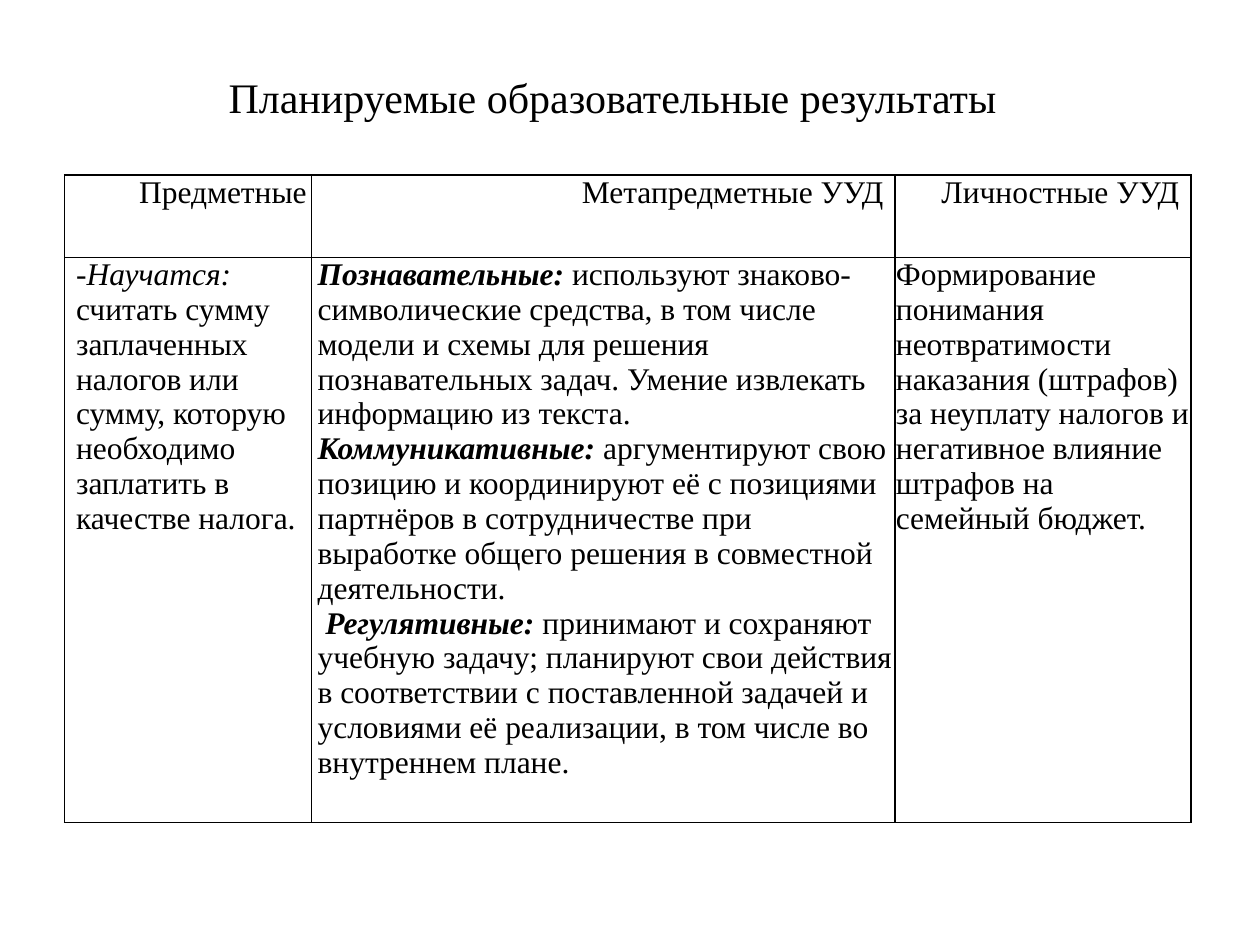
from dataclasses import dataclass

from lxml import etree
from pptx import Presentation
from pptx.dml.color import RGBColor
from pptx.enum.text import MSO_ANCHOR, PP_ALIGN
from pptx.oxml.ns import qn
from pptx.util import Pt

CENTER = PP_ALIGN.CENTER
TOP = MSO_ANCHOR.TOP


@dataclass(frozen=True)
class Theme:
    font: str = "Times New Roman"
    ink: str = "000000"
    paper: str = "FFFFFF"
    title_size: float = 24
    body_size: float = 18
    border: float = 1


THEME = Theme()
PLAIN, ITALIC, BOLD_ITALIC = (False, False), (False, True), (True, True)

TITLE = "Планируемые образовательные результаты"
COL_WIDTHS = (141, 333.5, 169)
ROW_HEIGHTS = (47, 323)

# Each heading: text, left indent
HEADINGS = (("Предметные", 42), ("Метапредметные УУД", 154), ("Личностные УУД", 26))

# Each column: left indent, then paragraphs of (first-line indent, runs)
RESULTS = (
    (6, [(0, [("-Научатся:", ITALIC),
              (" считать сумму заплаченных налогов или сумму, которую необходимо "
               "заплатить в качестве налога.", PLAIN)])]),
    (3, [(0, [("Познавательные:", BOLD_ITALIC),
              (" используют знаково-символические средства, в том числе модели и схемы "
               "для решения познавательных задач. Умение извлекать информацию из текста.",
               PLAIN)]),
         (0, [("Коммуникативные:", BOLD_ITALIC),
              (" аргументируют свою позицию и координируют её с позициями партнёров в "
               "сотрудничестве при выработке общего решения в совместной деятельности.",
               PLAIN)]),
         (4.5, [("Регулятивные:", BOLD_ITALIC),
                (" принимают и сохраняют учебную задачу; планируют свои действия в "
                 "соответствии с поставленной задачей и условиями её реализации, в том "
                 "числе во внутреннем плане.", PLAIN)])]),
    (0, [(0, [("Формирование понимания неотвратимости наказания (штрафов) за неуплату "
               "налогов и негативное влияние штрафов на семейный бюджет.", PLAIN)])]),
)


def add_run(p, text, size, style=PLAIN):
    r = p.add_run()
    r.text = text
    r.font.name = THEME.font
    r.font.size = Pt(size)
    r.font.color.rgb = RGBColor.from_string(THEME.ink)
    r.font.bold, r.font.italic = style


def add_borders(cell):
    """Draw all four sides; the lines must precede the fill in the cell XML."""
    tc_pr = cell._tc.get_or_add_tcPr()
    for i, side in enumerate(("a:lnL", "a:lnR", "a:lnT", "a:lnB")):
        ln = etree.Element(qn(side), w=str(Pt(THEME.border)))
        fill = etree.SubElement(ln, qn("a:solidFill"))
        etree.SubElement(fill, qn("a:srgbClr"), val=THEME.ink)
        tc_pr.insert(i, ln)


def fill_cell(cell, indent, paragraphs):
    cell.margin_left = cell.margin_right = Pt(0.5)
    cell.margin_top = cell.margin_bottom = Pt(0)
    cell.vertical_anchor = TOP
    cell.fill.solid()
    cell.fill.fore_color.rgb = RGBColor.from_string(THEME.paper)
    add_borders(cell)
    tf = cell.text_frame
    for i, (first_line, runs) in enumerate(paragraphs):
        p = tf.add_paragraph() if i else tf.paragraphs[0]
        p_pr = p._p.get_or_add_pPr()
        p_pr.set("marL", str(Pt(indent)))
        p_pr.set("indent", str(Pt(first_line)))
        for text, style in runs:
            add_run(p, text, THEME.body_size, style)


def add_title(slide, left, top, width, height):
    box = slide.shapes.add_textbox(Pt(left), Pt(top), Pt(width), Pt(height))
    tf = box.text_frame
    tf.word_wrap = True
    tf.margin_left = tf.margin_right = tf.margin_top = tf.margin_bottom = Pt(0)
    p = tf.paragraphs[0]
    p.alignment = CENTER
    add_run(p, TITLE, THEME.title_size)


def add_results_table(slide, left, top, width, height):
    frame = slide.shapes.add_table(len(ROW_HEIGHTS), len(COL_WIDTHS),
                                   Pt(left), Pt(top), Pt(width), Pt(height))
    table = frame.table
    for col, share in zip(table.columns, COL_WIDTHS):
        col.width = Pt(width * share / sum(COL_WIDTHS))
    for row, share in zip(table.rows, ROW_HEIGHTS):
        row.height = Pt(height * share / sum(ROW_HEIGHTS))
    for c, (text, indent) in enumerate(HEADINGS):
        fill_cell(table.cell(0, c), indent, [(0, [(text, PLAIN)])])
    for c, (indent, paragraphs) in enumerate(RESULTS):
        fill_cell(table.cell(1, c), indent, paragraphs)


def main():
    prs = Presentation()
    prs.slide_width, prs.slide_height = Pt(720), Pt(540)
    slide = prs.slides.add_slide(prs.slide_layouts[6])
    add_results_table(slide, 37, 100, 643.5, 370)
    add_title(slide, 100, 41, 500, 28)
    prs.save("out.pptx")


if __name__ == "__main__":
    main()
